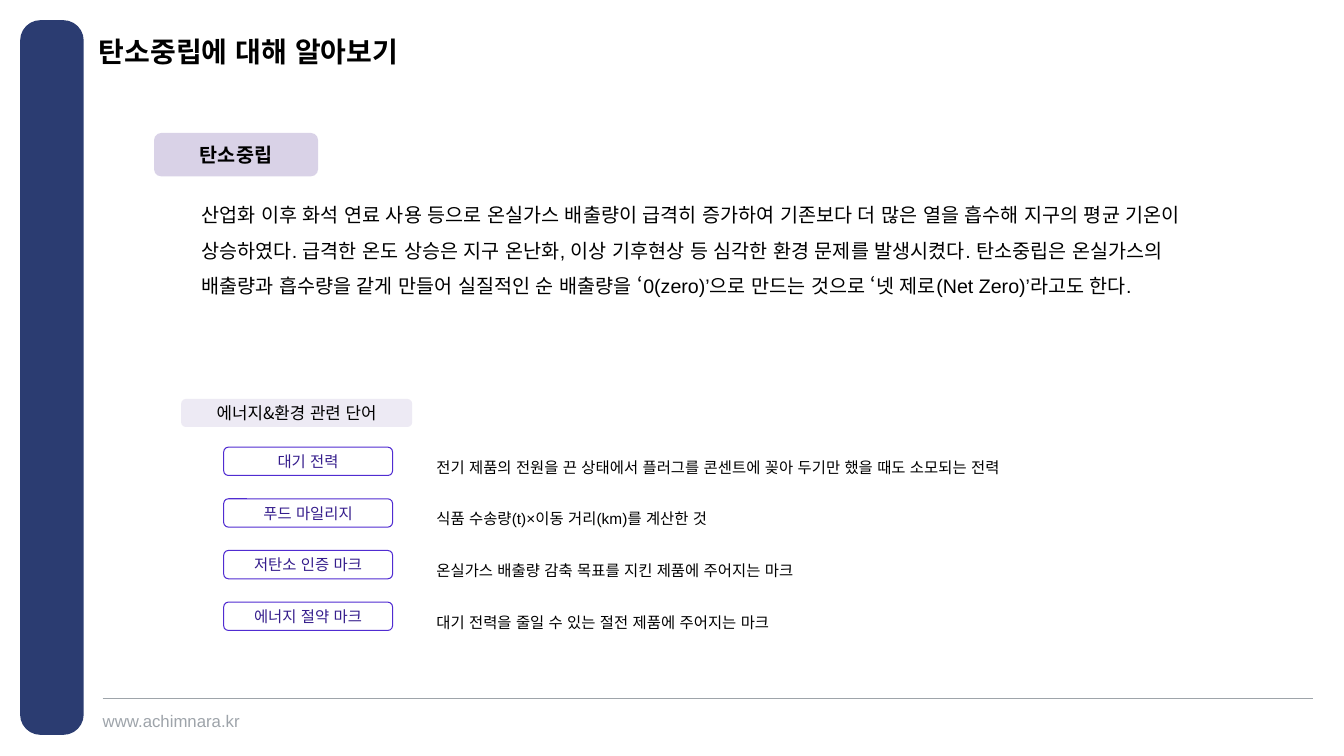
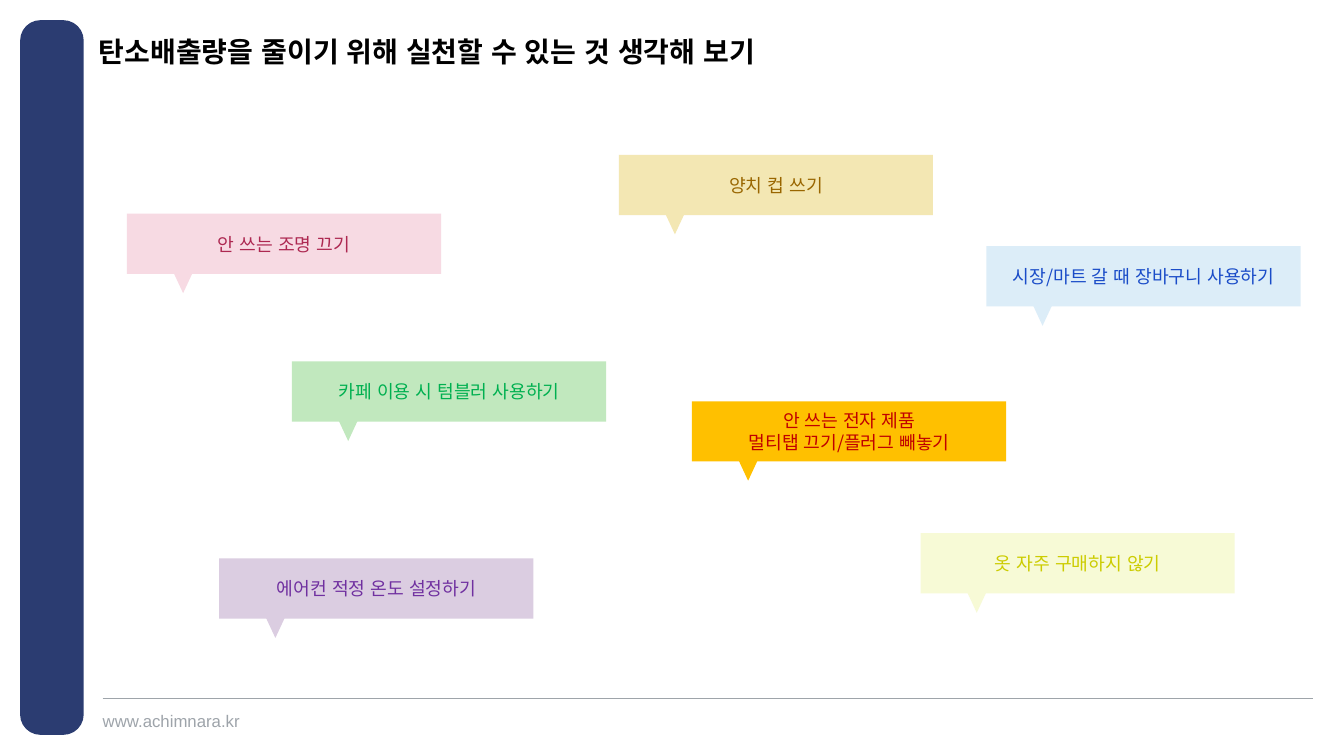
from dataclasses import dataclass

from lxml.etree import SubElement
from pptx import Presentation
from pptx.dml.color import RGBColor
from pptx.enum.lang import MSO_LANGUAGE_ID as Language
from pptx.enum.shapes import MSO_CONNECTOR as Connector, MSO_SHAPE as Preset
from pptx.enum.text import MSO_ANCHOR as Anchor, MSO_AUTO_SIZE as AutoSize, PP_ALIGN as Align
from pptx.oxml.ns import qn
from pptx.util import Pt


@dataclass(frozen=True)
class Theme:
    latin: str = "Arial"
    korean: str = "Noto Sans CJK KR"
    ink: str = "000000"
    gray: str = "9EA4AA"
    navy: str = "2B3C71"
    white: str = "FFFFFF"
    heading_fill: str = "B4A7D1"
    subheading_fill: str = "DCD6EA"
    label_line: str = "502CD1"
    label_ink: str = "351D8C"
    title_size: float = 20
    body_size: float = 14
    bubble_size: float = 13
    small_size: float = 12
    term_size: float = 11


THEME = Theme()
FOOTER = "www.achimnara.kr"

DEFINITION = (
    "산업화 이후 화석 연료 사용 등으로 온실가스 배출량이 급격히 증가하여 기존보다 더 많은 열을 흡수해 "
    "지구의 평균 기온이 상승하였다. 급격한 온도 상승은 지구 온난화, 이상 기후현상 등 심각한 환경 문제를 "
    "발생시켰다. 탄소중립은 온실가스의 배출량과 흡수량을 같게 만들어 실질적인 순 배출량을 ‘0(zero)’으로 "
    "만드는 것으로 ‘넷 제로(Net Zero)’라고도 한다."
)

TERMS = [
    ("대기 전력", "전기 제품의 전원을 끈 상태에서 플러그를 콘센트에 꽂아 두기만 했을 때도 소모되는 전력"),
    ("푸드 마일리지", "식품 수송량(t)×이동 거리(km)를 계산한 것"),
    ("저탄소 인증 마크", "온실가스 배출량 감축 목표를 지킨 제품에 주어지는 마크"),
    ("에너지 절약 마크", "대기 전력을 줄일 수 있는 절전 제품에 주어지는 마크"),
]
FIRST_TERM_TOP = 319.4
TERM_PITCH = 36.9

# left, top, fill, text colour, text
BUBBLES = [
    (90.7, 152.6, "F7DAE3", "AD2851", "안 쓰는 조명 끄기"),
    (208.6, 258.2, "C1E8BE", "00B050", "카페 이용 시 텀블러 사용하기"),
    (704.6, 175.9, "DCEDF8", "1A4CC8", "시장/마트 갈 때 장바구니 사용하기"),
    (494.3, 286.6, "FFC000", "C00000", "안 쓰는 전자 제품\n멀티탭 끄기/플러그 빼놓기"),
    (156.6, 398.9, "DBCDE1", "7030A0", "에어컨 적정 온도 설정하기"),
    (442, 110.6, "F3E7B3", "996600", "양치 컵 쓰기"),
    (657.6, 380.9, "F7FAD6", "CCCC00", "옷 자주 구매하지 않기"),
]


def write_text(shape, text, *, size, color=THEME.ink, font=THEME.latin, bold=False,
               align=Align.LEFT, anchor=Anchor.TOP, line_spacing=None, inset=True):
    """Fill a shape with text, one paragraph for each line."""
    frame = shape.text_frame
    frame.word_wrap = True
    frame.vertical_anchor = anchor
    if not inset:
        frame.margin_left = frame.margin_right = frame.margin_top = frame.margin_bottom = 0
    for index, line in enumerate(text.split("\n")):
        paragraph = frame.add_paragraph() if index else frame.paragraphs[0]
        paragraph.alignment = align
        if line_spacing:
            paragraph.line_spacing = line_spacing
        run = paragraph.add_run()
        run.text = line
        run.font.size = Pt(size)
        run.font.bold = bold
        run.font.name = font
        run.font.language_id = Language.KOREAN
        run.font.color.rgb = RGBColor.from_string(color)
        SubElement(run.font._element, qn("a:ea")).set("typeface", THEME.korean)


class Deck:
    def __init__(self):
        self.presentation = Presentation()
        self.presentation.slide_width = Pt(960)
        self.presentation.slide_height = Pt(540)
        self.slide = None

    def start_slide(self, title):
        """Add a slide with the side band, footer and title."""
        self.slide = self.presentation.slides.add_slide(self.presentation.slide_layouts[6])
        band = self.add_box(14.4, 14.4, 45.4, 510.5, THEME.navy)
        band.adjustments[0] = 0.32
        self.add_rule(73.4, 938.2, 499)
        self.add_text(73.4, 507.6, 108, 14.4, FOOTER, size=THEME.small_size,
                      color=THEME.gray, inset=False)
        self.add_text(70.6, 28.1, 566.6, 20.2, title, size=THEME.title_size, bold=True,
                      line_spacing=0.9, anchor=Anchor.MIDDLE, inset=False)

    def add_rule(self, left, right, top):
        rule = self.slide.shapes.add_connector(
            Connector.STRAIGHT, Pt(left), Pt(top), Pt(right), Pt(top))
        rule.line.color.rgb = RGBColor.from_string(THEME.gray)
        rule.line.width = Pt(0.5)
        SubElement(rule._element.spPr, qn("a:effectLst"))

    def add_text(self, left, top, width, height, text, *, grow=False, **text_format):
        box = self.slide.shapes.add_textbox(Pt(left), Pt(top), Pt(width), Pt(height))
        write_text(box, text, **text_format)
        box.text_frame.auto_size = AutoSize.SHAPE_TO_FIT_TEXT if grow else AutoSize.NONE

    def add_box(self, left, top, width, height, fill, *, preset=Preset.ROUNDED_RECTANGLE,
                line=None, opacity=None, text=None, parent=None, **text_format):
        """Add a preset shape, to the slide or to a group, with optional centred text."""
        shapes = (parent or self.slide).shapes
        shape = shapes.add_shape(preset, Pt(left), Pt(top), Pt(width), Pt(height))
        shape.shadow.inherit = False
        shape.fill.solid()
        shape.fill.fore_color.rgb = RGBColor.from_string(fill)
        if opacity:
            color = shape._element.spPr.find(".//" + qn("a:srgbClr"))
            SubElement(color, qn("a:alpha")).set("val", str(opacity * 1000))
        if line:
            shape.line.color.rgb = RGBColor.from_string(line)
            shape.line.width = Pt(0.75)
        else:
            shape.line.fill.background()
        if text:
            write_text(shape, text, font=THEME.korean, align=Align.CENTER,
                       anchor=Anchor.MIDDLE, **text_format)
        return shape

    def add_term(self, top, term, meaning):
        self.add_box(159.8, top, 120.6, 20.2, THEME.white, line=THEME.label_line,
                     text=term, size=THEME.term_size, color=THEME.label_ink)
        self.add_text(304.6, top - 2.6, 462.2, 24.5, meaning, size=THEME.term_size,
                      line_spacing=1.5, grow=True)

    def add_bubble(self, left, top, fill, color, text):
        group = self.slide.shapes.add_group_shape()
        tail = self.add_box(left + 29.3, top + 33.6, 21.6, 23.2, fill,
                            preset=Preset.ISOSCELES_TRIANGLE, parent=group)
        tail.rotation = 180
        self.add_box(left, top, 224.4, 43, fill, preset=Preset.RECTANGLE, parent=group,
                     text=text, size=THEME.bubble_size, color=color)


def build_meaning_slide(deck):
    deck.start_slide("탄소중립에 대해 알아보기")
    deck.add_text(136.8, 133.2, 748.1, 105.8, DEFINITION, size=THEME.body_size,
                  line_spacing=1.5, grow=True)
    deck.add_box(110, 95, 117.2, 31, THEME.heading_fill, opacity=50,
                 text="탄소중립", size=THEME.body_size, bold=True)
    deck.add_box(129.4, 285, 165, 20, THEME.subheading_fill, opacity=50,
                 text="에너지&환경 관련 단어", size=THEME.small_size)
    for row, (term, meaning) in enumerate(TERMS):
        deck.add_term(FIRST_TERM_TOP + row * TERM_PITCH, term, meaning)


def build_practice_slide(deck):
    deck.start_slide("탄소배출량을 줄이기 위해 실천할 수 있는 것 생각해 보기")
    for bubble in BUBBLES:
        deck.add_bubble(*bubble)


def main():
    deck = Deck()
    build_meaning_slide(deck)
    build_practice_slide(deck)
    deck.presentation.save("out.pptx")


if __name__ == "__main__":
    main()
